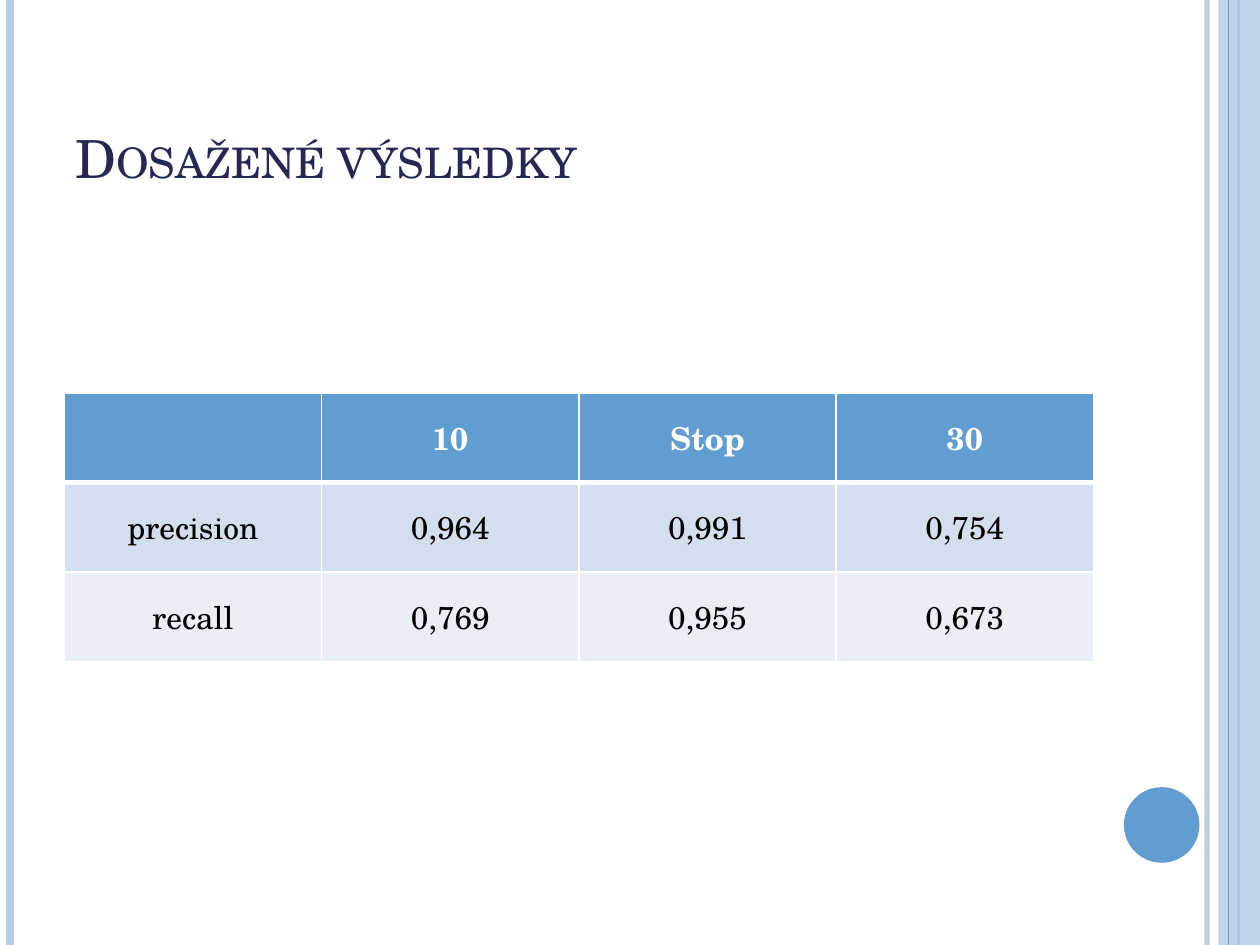
from dataclasses import dataclass

from lxml import etree
from pptx import Presentation
from pptx import util as u
from pptx.dml.color import RGBColor
from pptx.enum import shapes, text
from pptx.oxml.ns import qn


@dataclass(frozen=True)
class Theme:
    font: str = "TeX Gyre Schola"
    title_size: int = 30
    table_size: int = 18
    navy: str = "242852"
    blue: str = "629DD1"
    pale: str = "B7CCE5"
    white: str = "FFFFFF"
    black: str = "000000"
    bands: tuple = ("D3DFEE", "EAEFF7")


THEME = Theme()
WIDTH, HEIGHT = u.Inches(10), u.Inches(7.5)
RESULTS = [
    ("", "10", "Stop", "30"),
    ("precision", "0,964", "0,991", "0,754"),
    ("recall", "0,769", "0,955", "0,673"),
]


def share(box):
    """Turn shares of the slide's size into lengths."""
    left, top, width, height = box
    return [int(left * WIDTH), int(top * HEIGHT), int(width * WIDTH), int(height * HEIGHT)]


def set_font(paragraph, size, color, bold=False):
    font = paragraph.font
    font.name, font.size, font.bold = THEME.font, u.Pt(size), bold
    font.color.rgb = RGBColor.from_string(color)


def set_opacity(color_parent, percent):
    color = next(color_parent.iter(qn("a:srgbClr")))
    etree.SubElement(color, qn("a:alpha"), val=str(percent * 1000))


def add_stripe(slide, x, color, weight, opacity=100):
    left = int(x * WIDTH)
    stripe = slide.shapes.add_connector(shapes.MSO_CONNECTOR.STRAIGHT, left, 0, left, HEIGHT)
    stripe.line.color.rgb = RGBColor.from_string(color)
    stripe.line.width = u.Pt(weight)
    properties = stripe.line._get_or_add_ln().getparent()
    etree.SubElement(properties, qn("a:effectLst"))
    if opacity < 100:
        set_opacity(properties, opacity)


def add_solid(slide, kind, box, color):
    solid = slide.shapes.add_shape(kind, *share(box))
    solid.shadow.inherit = False
    solid.fill.solid()
    solid.fill.fore_color.rgb = RGBColor.from_string(color)
    solid.line.fill.background()
    return solid


def draw_frame(slide, band, dot):
    # Stripes behind the side band
    add_stripe(slide, 0.958, THEME.pale, 3, opacity=93)
    add_stripe(slide, 0.008, THEME.pale, 4.5)
    add_stripe(slide, 0.983, THEME.blue, 1.5)
    # Translucent side band with a thin stripe on it
    side = add_solid(slide, shapes.MSO_SHAPE.RECTANGLE, band, THEME.pale)
    set_opacity(side._element.spPr, 87)
    add_stripe(slide, 0.975, THEME.blue, 0.75)
    # Page dot
    add_solid(slide, shapes.MSO_SHAPE.OVAL, dot, THEME.blue)


def draw_title(slide, box, wording):
    frame = slide.shapes.add_textbox(*share(box)).text_frame
    frame.word_wrap = True
    frame.vertical_anchor = text.MSO_ANCHOR.BOTTOM
    heading = frame.paragraphs[0]
    run = heading.add_run()
    run.text = wording
    set_font(heading, THEME.title_size, THEME.navy)
    run.font._element.set("cap", "small")


def set_borders(cell, bottom):
    properties = cell._tc.get_or_add_tcPr()
    for position, (side, weight) in enumerate(
        [("lnL", 1), ("lnR", 1), ("lnT", 1), ("lnB", bottom)]
    ):
        border = etree.Element(qn(f"a:{side}"), w=str(u.Pt(weight)))
        fill = etree.SubElement(border, qn("a:solidFill"))
        etree.SubElement(fill, qn("a:srgbClr"), val=THEME.white)
        properties.insert(position, border)


def draw_results(slide, box, rows):
    table = slide.shapes.add_table(len(rows), len(rows[0]), *share(box)).table
    for r, row in enumerate(rows):
        header = r == 0
        fill = THEME.blue if header else THEME.bands[(r - 1) % 2]
        for c, value in enumerate(row):
            cell = table.cell(r, c)
            cell.fill.solid()
            cell.fill.fore_color.rgb = RGBColor.from_string(fill)
            # The rule under the header is heavier, seen from both rows
            set_borders(cell, bottom=3 if header else 1)
            if r == 1:
                cell._tc.tcPr.find(qn("a:lnT")).set("w", str(u.Pt(3)))
            cell.vertical_anchor = text.MSO_ANCHOR.MIDDLE
            cell.text = value
            label = cell.text_frame.paragraphs[0]
            label.alignment = text.PP_ALIGN.CENTER
            set_font(label, THEME.table_size, THEME.white if header else THEME.black, header)


def main():
    deck = Presentation()
    deck.slide_width, deck.slide_height = WIDTH, HEIGHT
    slide = deck.slides.add_slide(deck.slide_layouts[6])
    draw_frame(slide, band=(0.967, 0, 0.033, 1), dot=(0.892, 0.833, 0.06, 0.08))
    draw_title(slide, (0.05, 0.04, 0.817, 0.167), "Dosažené výsledky")
    draw_results(slide, (0.051, 0.416, 0.817, 0.284), RESULTS)
    deck.save("out.pptx")


if __name__ == "__main__":
    main()
